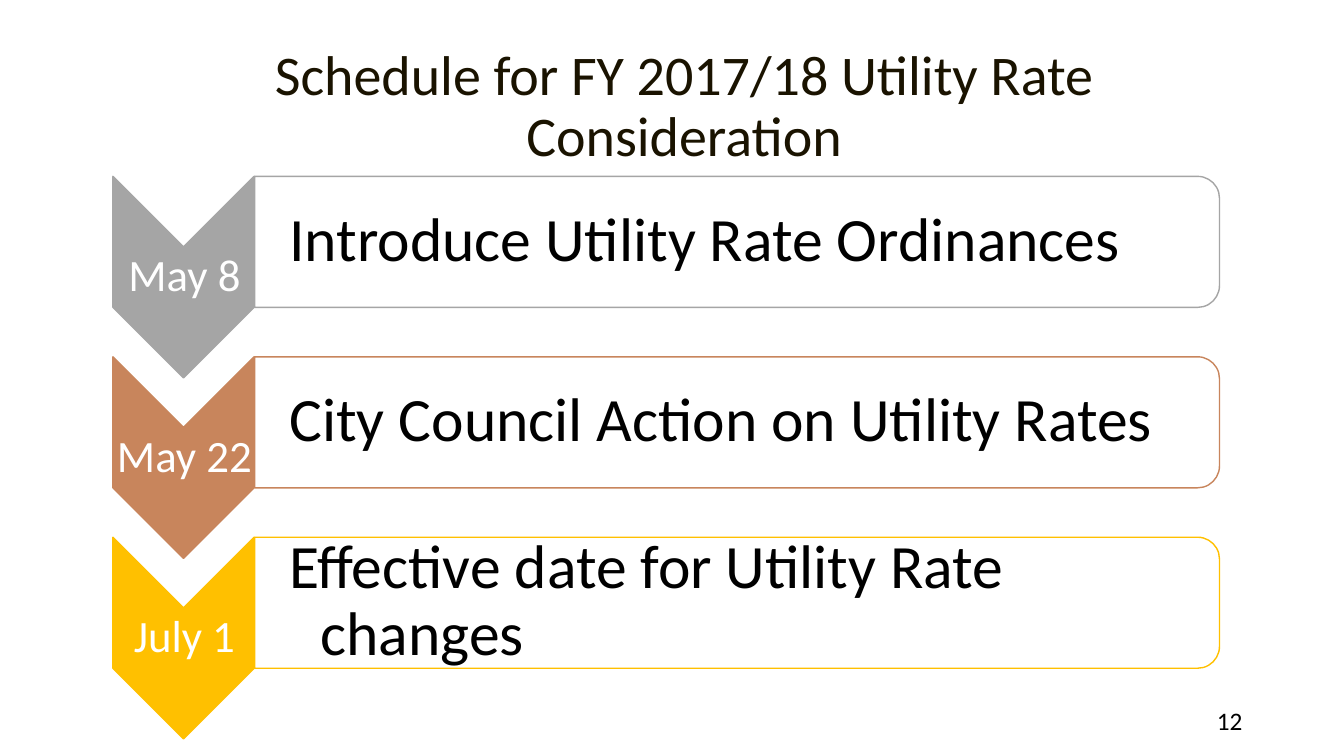
from lxml.etree import SubElement
from pptx import Presentation
from pptx.dml.color import RGBColor
from pptx.enum.shapes import MSO_SHAPE
from pptx.enum.text import MSO_ANCHOR, PP_ALIGN
from pptx.oxml.ns import qn
from pptx.util import Inches, Pt

COLORS = {
    "title": "1A1300",
    "text": "000000",
    "white": "FFFFFF",
    "gray": "A5A5A5",
    "copper": "C8855C",
    "gold": "FFC000",
}
STEPS = [
    ("May 8", "Introduce Utility Rate Ordinances", "gray"),
    ("May 22", "City Council Action on Utility Rates", "copper"),
    ("July 1", "Effective date for Utility Rate changes", "gold"),
]
FIRST_TOP = 1.75
STEP_PITCH = 1.79


def color(name):
    return RGBColor.from_string(COLORS[name])


def format_paragraph(paragraph, size, color_name, alignment):
    paragraph.alignment = alignment
    paragraph.font.name = "Calibri"
    paragraph.font.size = Pt(size)
    paragraph.font.color.rgb = color(color_name)


def add_text(slide, text, box, size, color_name, alignment, left_inset, inset):
    shape = slide.shapes.add_textbox(*map(Inches, box))
    frame = shape.text_frame
    frame.word_wrap = True
    frame.vertical_anchor = MSO_ANCHOR.MIDDLE
    frame.margin_left = Inches(left_inset)
    frame.margin_right = frame.margin_top = frame.margin_bottom = Inches(inset)
    paragraph = frame.paragraphs[0]
    paragraph.text = text
    format_paragraph(paragraph, size, color_name, alignment)
    return paragraph


def add_rotated_shape(slide, preset, center_x, center_y, length, breadth, fill, line):
    shape = slide.shapes.add_shape(
        preset,
        Inches(center_x - length / 2),
        Inches(center_y - breadth / 2),
        Inches(length),
        Inches(breadth),
    )
    shape.rotation = 90
    shape.shadow.inherit = False
    shape.fill.solid()
    shape.fill.fore_color.rgb = color(fill)
    shape.line.color.rgb = color(line)
    shape.line.width = Pt(1)
    return shape


def set_opacity(shape, percent):
    fill_color = shape.fill._xPr.find(qn("a:solidFill"))[0]
    SubElement(fill_color, qn("a:alpha")).set("val", str(percent * 1000))


def add_step(slide, top, date, action, accent):
    add_rotated_shape(slide, MSO_SHAPE.CHEVRON, 1.82, top + 1, 2, 1.4, accent, accent)
    date_paragraph = add_text(
        slide, date, (1.13, top + 0.7, 1.4, 0.6), 32, "white", PP_ALIGN.CENTER, 0.02, 0.02
    )
    date_paragraph.line_spacing = 0.9

    panel = add_rotated_shape(
        slide, MSO_SHAPE.ROUND_2_SAME_RECTANGLE, 7.31, top + 0.65, 1.3, 9.57, "white", accent
    )
    set_opacity(panel, 90)
    action_paragraph = add_text(
        slide, action, (2.53, top + 0.06, 9.51, 1.17), 44, "text", PP_ALIGN.LEFT, 0.34, 0.03
    )
    action_paragraph.line_spacing = 0.9
    properties = action_paragraph._p.get_or_add_pPr()
    properties.set("marL", str(Inches(0.31)))
    properties.set("indent", str(Inches(-0.31)))


def add_title(slide, text):
    title = slide.shapes.title
    title.left, title.top = Inches(1.12), Inches(0.42)
    title.width, title.height = Inches(11.33), Inches(0.83)
    frame = title.text_frame
    frame.text = text
    frame.word_wrap = True
    frame.vertical_anchor = MSO_ANCHOR.TOP
    paragraph = frame.paragraphs[0]
    format_paragraph(paragraph, 40, "title", PP_ALIGN.CENTER)
    paragraph.line_spacing = 0.9


def main():
    presentation = Presentation()
    presentation.slide_width = Inches(13.33)
    presentation.slide_height = Inches(7.5)
    slide = presentation.slides.add_slide(presentation.slide_layouts[5])
    add_title(slide, "Schedule for FY 2017/18 Utility Rate Consideration")
    add_text(slide, "12", (9.42, 6.95, 3, 0.4), 18, "text", PP_ALIGN.RIGHT, 0.1, 0.1)
    for index, (date, action, accent) in enumerate(STEPS):
        add_step(slide, FIRST_TOP + index * STEP_PITCH, date, action, accent)
    presentation.save("out.pptx")


if __name__ == "__main__":
    main()
